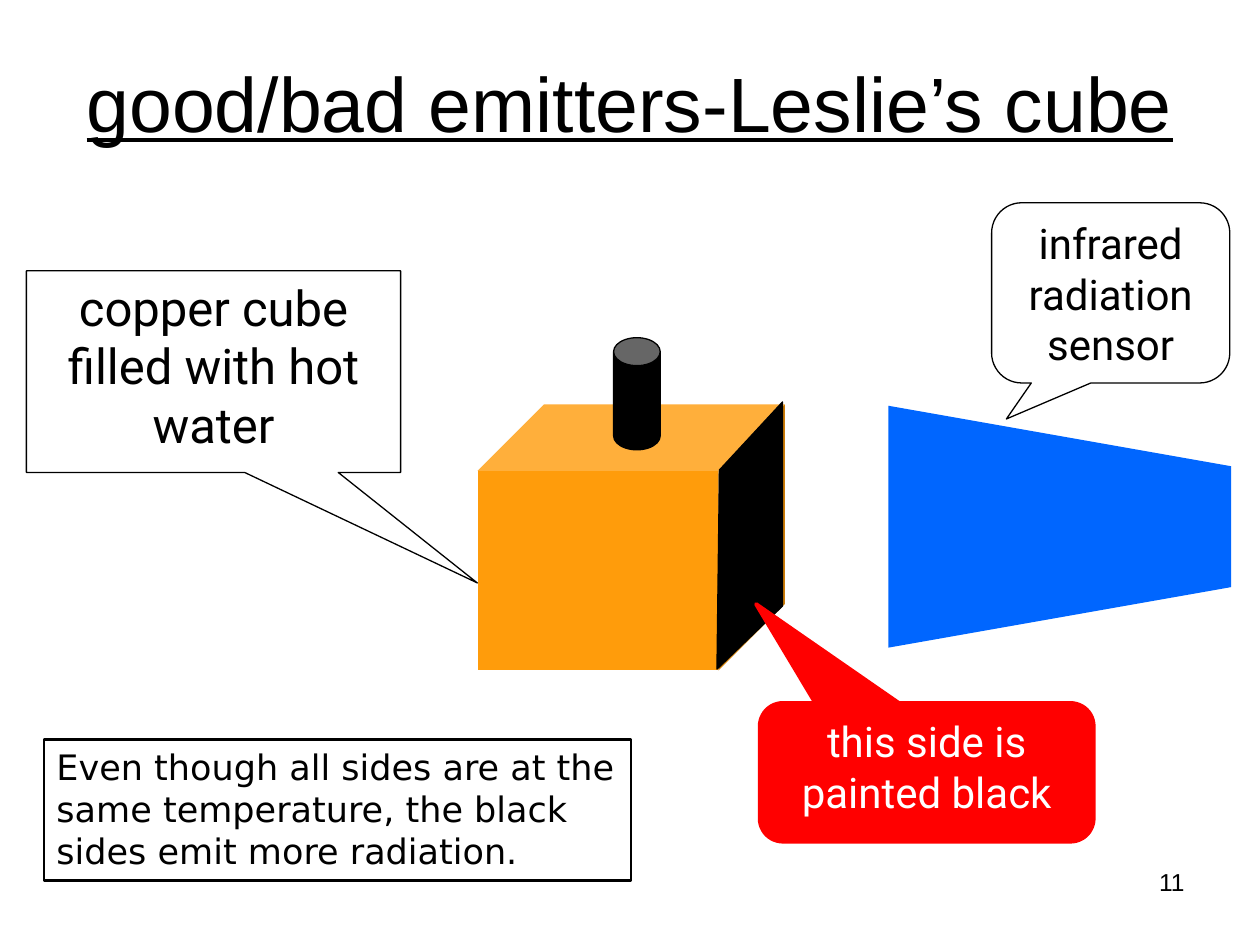
from dataclasses import dataclass
from typing import Optional

from pptx import Presentation
from pptx.dml.color import RGBColor
from pptx.enum import shapes, text
from pptx.util import Inches, Pt

SHAPE = shapes.MSO_SHAPE
ALIGN = text.PP_ALIGN
ANCHOR = text.MSO_ANCHOR
BLACK, WHITE, RED = "000000", "FFFFFF", "FF0000"
COPPER, BLUE = "FF9C0B", "0066FF"


@dataclass
class Label:
    lines: list[str]
    size: float
    font: str
    color: str = BLACK
    align: ALIGN = ALIGN.CENTER
    anchor: ANCHOR = ANCHOR.TOP
    underline: bool = False
    wrap: bool = True


@dataclass
class Block:
    kind: SHAPE
    box: tuple[float, float, float, float]
    adj: tuple[float, ...] = ()
    fill: Optional[str] = None
    line: Optional[str] = None
    width: float = 0.75
    label: Optional[Label] = None


def rgb(value: str) -> RGBColor:
    return RGBColor.from_string(value)


def write(sp, label: Label) -> None:
    tf = sp.text_frame
    tf.word_wrap = label.wrap
    tf.vertical_anchor = label.anchor
    for i, line in enumerate(label.lines):
        p = tf.add_paragraph() if i else tf.paragraphs[0]
        p.alignment = label.align
        r = p.add_run()
        r.text = line
        r.font.size = Pt(label.size)
        r.font.name = label.font
        r.font.color.rgb = rgb(label.color)
        if label.underline:
            r.font.underline = True


def paint(sp, fill: Optional[str], line: Optional[str], width: float = 0.75) -> None:
    sp.shadow.inherit = False
    if fill:
        sp.fill.solid()
        sp.fill.fore_color.rgb = rgb(fill)
    else:
        sp.fill.background()
    if line:
        sp.line.color.rgb = rgb(line)
        sp.line.width = Pt(width)
    else:
        sp.line.fill.background()


def add_block(s, block: Block) -> None:
    sp = s.shapes.add_shape(block.kind, *map(Inches, block.box))
    for i, value in enumerate(block.adj):
        sp.adjustments[i] = value
    paint(sp, block.fill, block.line, block.width)
    if block.label:
        write(sp, block.label)


def add_polygon(s, points: list[tuple[float, float]], fill: str,
                line: Optional[str] = None) -> None:
    start, *rest = [(Inches(x), Inches(y)) for x, y in points]
    builder = s.shapes.build_freeform(*start)
    builder.add_line_segments(rest, close=True)
    paint(builder.convert_to_shape(), fill, line)


def add_text(s, box: tuple[float, float, float, float], label: Label) -> None:
    write(s.shapes.add_textbox(*map(Inches, box)), label)


CUBE = [
    Block(SHAPE.CUBE, (3.79, 3.21, 2.44, 2.11), (0.25,), COPPER),
    Block(SHAPE.CAN, (4.87, 2.68, 0.37, 0.89), (0.6,), BLACK, BLACK),
]
BLACK_SIDE = [(5.71, 3.73), (6.21, 3.19), (6.21, 4.81), (5.69, 5.31)]
SENSOR = [(7.05, 5.14), (9.77, 4.66), (9.77, 3.7), (7.05, 3.22)]

COPPER_NOTE = Block(
    SHAPE.RECTANGULAR_CALLOUT, (0.21, 2.15, 2.97, 1.6), (0.705, 1.048), line=BLACK,
    label=Label(["copper cube", "filled with hot", "water"], 28, "Roboto"))
BLACK_NOTE = Block(
    SHAPE.ROUNDED_RECTANGULAR_CALLOUT, (6.03, 5.58, 2.65, 1.1),
    (-0.511, -1.214, 0.167), RED, RED, 2.25,
    Label(["this side is", "painted black"], 24, "Roboto", WHITE))
SENSOR_NOTE = Block(
    SHAPE.ROUNDED_RECTANGULAR_CALLOUT, (7.87, 1.61, 1.89, 1.43),
    (-0.438, 0.7, 0.167), line=BLACK,
    label=Label(["infrared", "radiation sensor"], 24, "Roboto"))
CONCLUSION = Block(
    SHAPE.RECTANGLE, (0.35, 5.87, 4.66, 1.12), line=BLACK, width=1.5,
    label=Label(["Even though all sides are at the", "same temperature, the black",
                 "sides emit more radiation."],
                20, "DejaVu Sans", align=ALIGN.LEFT, wrap=False))


def main() -> None:
    prs = Presentation()
    prs.slide_width, prs.slide_height = Inches(10), Inches(7.5)
    s = prs.slides.add_slide(prs.slide_layouts[6])

    add_text(s, (0.5, 0.18, 9, 1.25),
             Label(["good/bad emitters-Leslie’s cube"], 44, "Arial",
                   anchor=ANCHOR.MIDDLE, underline=True))
    for block in CUBE:
        add_block(s, block)
    add_polygon(s, BLACK_SIDE, BLACK, BLACK)
    add_block(s, COPPER_NOTE)
    add_block(s, BLACK_NOTE)
    add_polygon(s, SENSOR, BLUE)
    add_block(s, SENSOR_NOTE)
    add_block(s, CONCLUSION)
    add_text(s, (7.17, 6.83, 2.33, 0.52),
             Label(["11"], 14, "Arial", align=ALIGN.RIGHT))

    prs.save("out.pptx")


if __name__ == "__main__":
    main()
